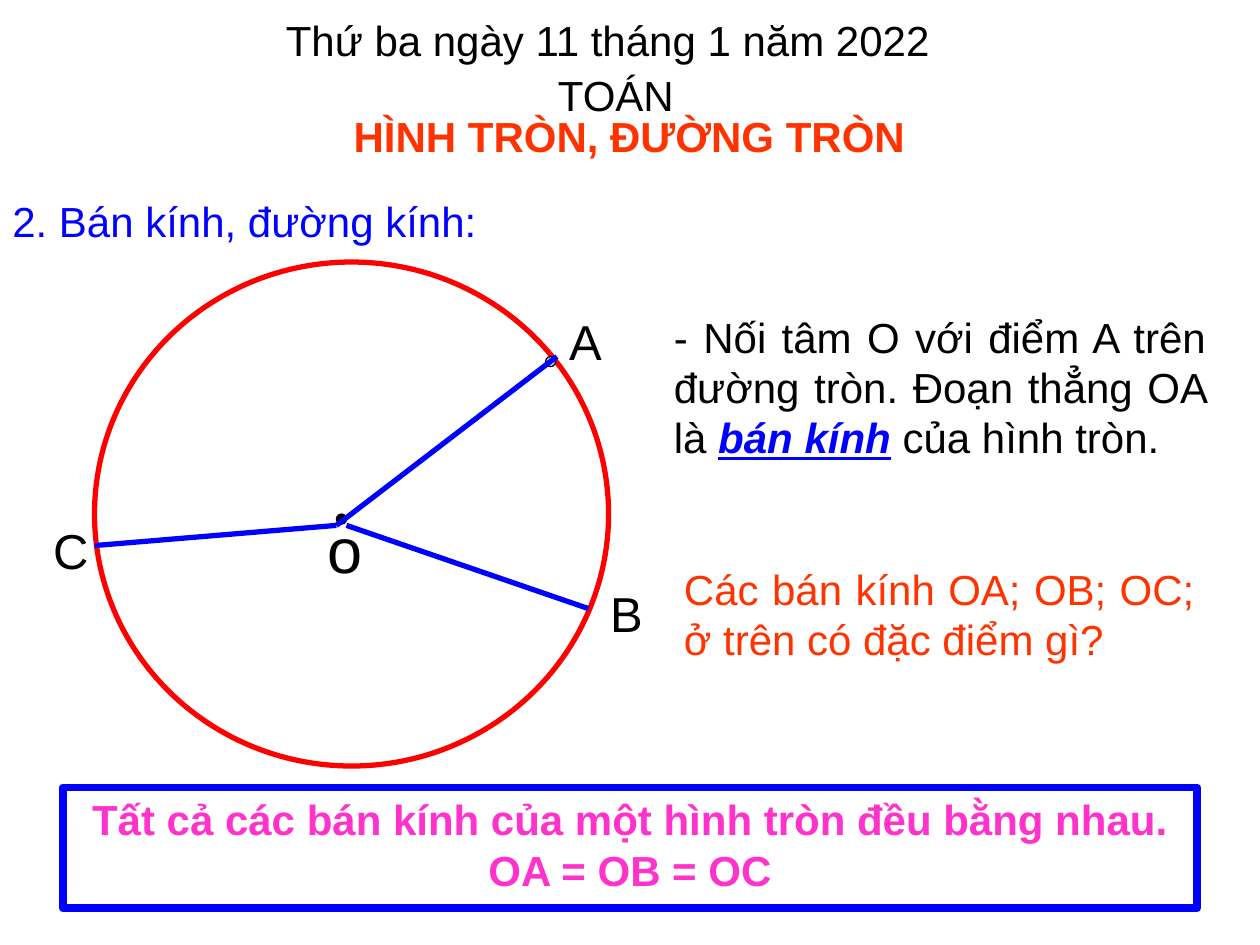
import pptx
import pptx.dml.color
import pptx.enum.shapes
import pptx.enum.text
import pptx.oxml.ns
import pptx.util
from lxml import etree

Inches = pptx.util.Inches
Shapes = pptx.enum.shapes.MSO_SHAPE
Align = pptx.enum.text.PP_ALIGN

BLACK, BLUE, RED = "000000", "0000FF", "FF0000"
ORANGE, PINK, PALE = "FF3300", "FF33CC", "BBE0E3"


def colour(value):
    return pptx.dml.color.RGBColor.from_string(value)


class Lesson:
    font = "Arial"
    size = 24
    stroke = 3

    def __init__(self, page):
        self.page = page

    def add_words(self, frame, paragraphs, align, size, wrap=True):
        frame.word_wrap = wrap
        frame.auto_size = pptx.enum.text.MSO_AUTO_SIZE.SHAPE_TO_FIT_TEXT
        frame.vertical_anchor = pptx.enum.text.MSO_ANCHOR.TOP
        for index, spans in enumerate(paragraphs):
            para = frame.add_paragraph() if index else frame.paragraphs[0]
            para.alignment = align
            for text, ink, *styles in spans:
                span = para.add_run()
                span.text = text
                span.font.name = self.font
                span.font.size = pptx.util.Pt(size)
                span.font.color.rgb = colour(ink)
                span.font.bold = "bold" in styles
                span.font.italic = "italic" in styles
                span.font.underline = "underline" in styles

    def text(self, left, top, width, height, spans, align=Align.LEFT, size=None, wrap=True):
        box = self.page.shapes.add_textbox(
            Inches(left), Inches(top), Inches(width), Inches(height))
        self.add_words(box.text_frame, [spans], align, size or self.size, wrap)

    def shape(self, kind, left, top, width, height, line, weight, fill=None):
        shape = self.page.shapes.add_shape(
            kind, Inches(left), Inches(top), Inches(width), Inches(height))
        shape.shadow.inherit = False
        if fill:
            shape.fill.solid()
            shape.fill.fore_color.rgb = colour(fill)
        else:
            shape.fill.background()
        shape.line.color.rgb = colour(line)
        shape.line.width = pptx.util.Pt(weight)
        return shape

    def radius(self, start, end):
        line = self.page.shapes.add_connector(
            pptx.enum.shapes.MSO_CONNECTOR.STRAIGHT,
            *(Inches(value) for value in (*start, *end)))
        line.line.color.rgb = colour(BLUE)
        line.line.width = pptx.util.Pt(self.stroke)
        etree.SubElement(line._element.spPr, pptx.oxml.ns.qn("a:effectLst"))


def main():
    deck = pptx.Presentation()
    deck.slide_width, deck.slide_height = Inches(10), Inches(7.5)
    lesson = Lesson(deck.slides.add_slide(deck.slide_layouts[6]))

    lesson.shape(Shapes.OVAL, 0.75, 2.08, 4.08, 4, RED, lesson.stroke)
    lesson.text(2.5, 4, 0.6, 0.7, [("o", BLACK)], size=36)
    for name, left, top in (("A", 4.42, 2.42), ("B", 4.75, 4.58), ("C", 0.33, 4.08)):
        lesson.text(left, top, 0.47, 0.57, [(name, BLACK)], size=28, wrap=False)

    lesson.text(5.25, 2.42, 4.42, 1.3, [
        ("- Nối tâm O với điểm A trên đường tròn. Đoạn thẳng OA là ", BLACK),
        ("bán kính", BLUE, "bold", "italic", "underline"),
        (" của hình tròn.", BLACK),
    ], Align.JUSTIFY)
    lesson.text(5.33, 4.42, 4.25, 0.9, [
        ("Các bán kính OA; OB; OC; ở trên có đặc điểm gì?", ORANGE)], Align.JUSTIFY)

    lesson.shape(Shapes.FLOWCHART_CONNECTOR, 2.67, 4.08, 0.08, 0.08, BLACK, 0.75, BLACK)
    lesson.text(2.17, 0.07, 6, 0.5, [("Thứ ba ngày 11 tháng 1 năm 2022", BLACK)])
    lesson.text(4.33, 0.5, 1.17, 0.5, [("TOÁN", BLACK)])
    lesson.text(2.33, 0.83, 5.33, 0.5, [
        ("HÌNH TRÒN, ĐƯỜNG TRÒN", ORANGE, "bold")], Align.CENTER)

    lesson.shape(Shapes.OVAL, 4.33, 2.83, 0.08, 0.08, BLACK, 0.75, PALE)
    lesson.radius((4.42, 2.83), (2.67, 4.17))
    lesson.radius((4.67, 4.83), (2.75, 4.17))
    lesson.radius((0.75, 4.33), (2.67, 4.17))

    conclusion = lesson.shape(Shapes.RECTANGLE, 0.5, 6.25, 9, 0.96, BLUE, 4.5)
    lesson.add_words(conclusion.text_frame, [
        [("Tất cả các bán kính của một hình tròn đều bằng nhau.", PINK, "bold")],
        [("OA = OB = OC", PINK, "bold")],
    ], Align.CENTER, lesson.size)
    lesson.text(0, 1.5, 6.17, 0.5, [("2. Bán kính, đường kính:", BLUE)])

    deck.save("out.pptx")


if __name__ == "__main__":
    main()
